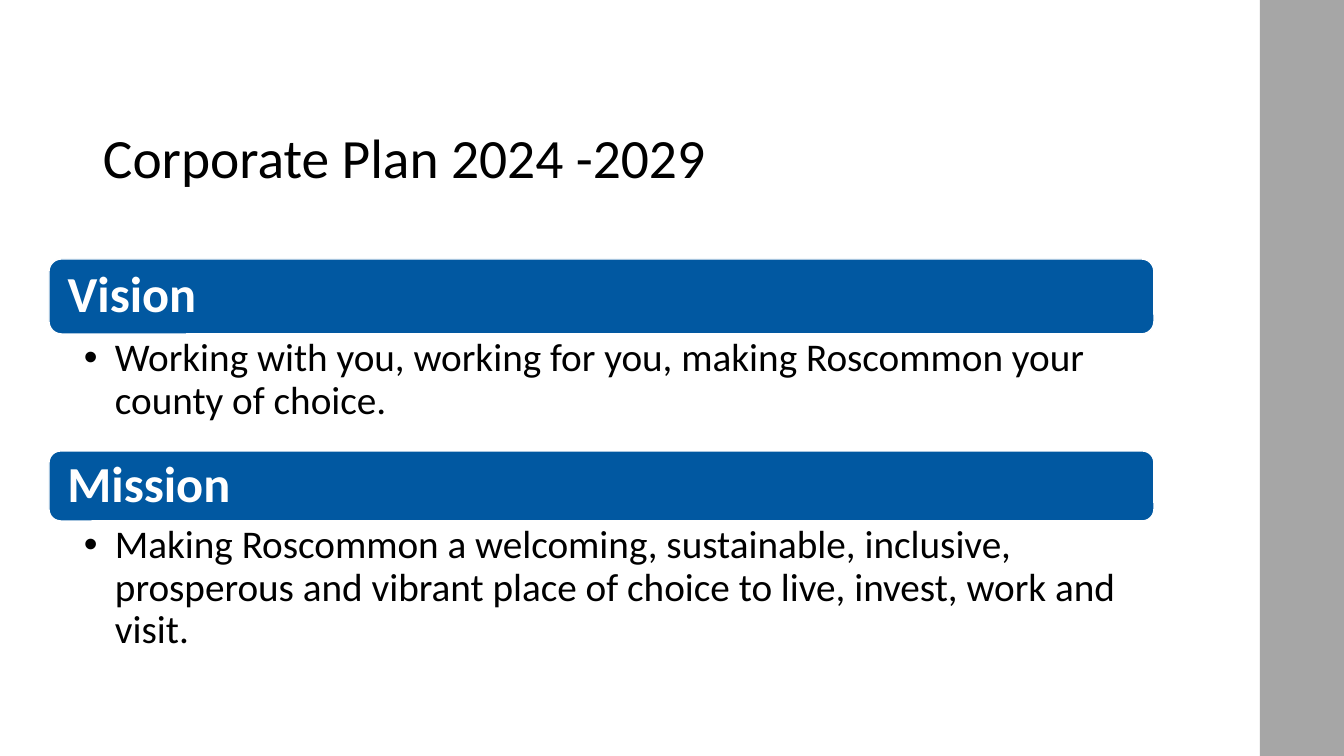
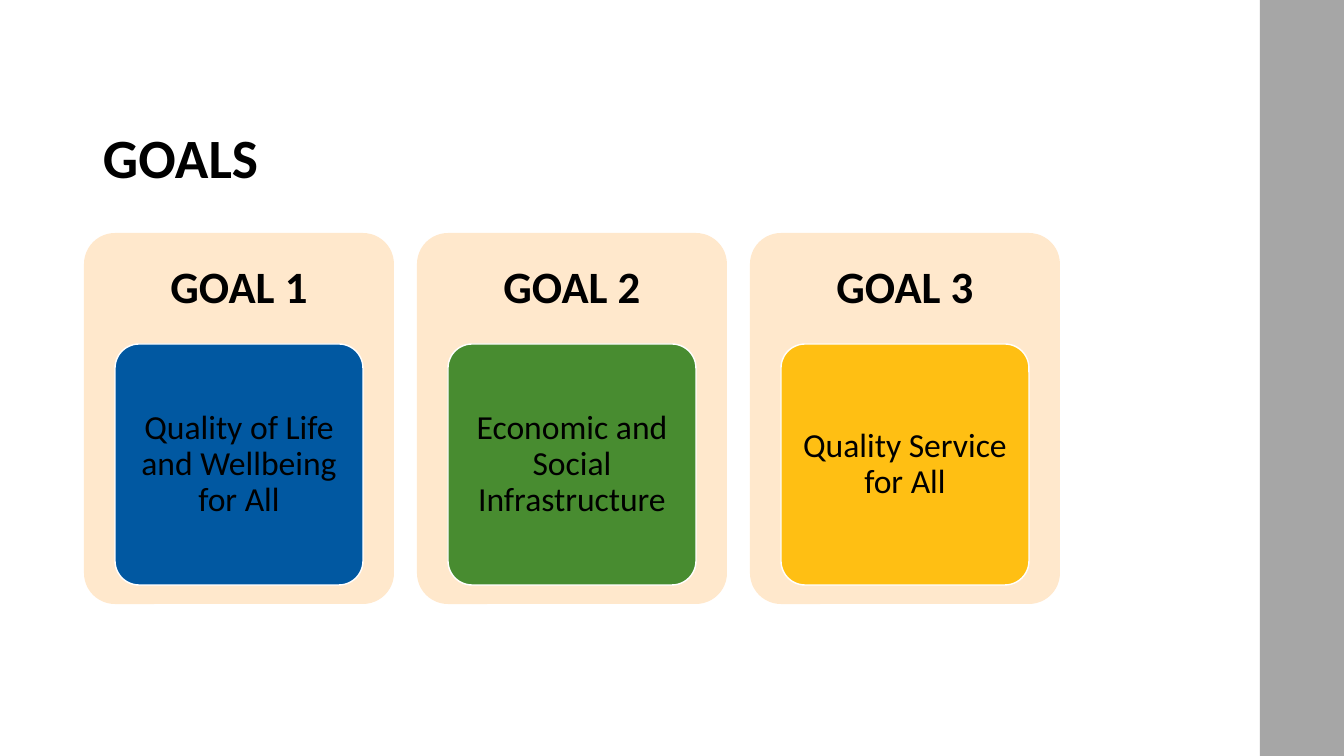
"""Build the corporate plan slides: vision and mission, then goals."""
from dataclasses import dataclass

from lxml import etree
from pptx import Presentation
from pptx import util as u
from pptx.dml.color import RGBColor
from pptx.enum import shapes, text
from pptx.oxml.ns import qn

PX = 12192000 / 1344


def px(n):
    return u.Emu(round(n * PX))


@dataclass(frozen=True)
class Theme:
    font: str = "Calibri"
    ink: str = "000000"
    paper: str = "FFFFFF"
    band: str = "A6A6A6"
    panel: str = "FFE8CC"
    blue: str = "0158A1"
    green: str = "488C30"
    yellow: str = "FFBF13"
    title: float = 39.6
    bar: int = 36
    goal: int = 32
    body: int = 28
    tile: int = 24


class Deck:
    """Hold the style and the current slide, and draw each kind of element."""

    def __init__(self, theme):
        self.theme = theme
        self.prs = Presentation()
        self.prs.slide_width, self.prs.slide_height = px(1344), px(756)
        self.s = None

    def slide(self, title, bold=False):
        t = self.theme
        self.s = self.prs.slides.add_slide(self.prs.slide_layouts[6])
        self.shape((1260, 0, 84, 756), t.band, kind=shapes.MSO_SHAPE.RECTANGLE)
        self.label((93, 135, 1159, 51), title, t.title, bold=bold, insets=(10, 5, 10, 5))

    def shape(self, box, fill, line=None, adj=None, kind=shapes.MSO_SHAPE.ROUNDED_RECTANGLE):
        sp = self.s.shapes.add_shape(kind, *map(px, box))
        sp.shadow.inherit = False
        sp.fill.solid()
        sp.fill.fore_color.rgb = RGBColor.from_string(fill)
        if line:
            sp.line.color.rgb = RGBColor.from_string(line)
            sp.line.width = u.Pt(1)
        else:
            sp.line.fill.background()
        if adj is not None:
            sp.adjustments[0] = adj
        return sp

    def label(self, box, words, size, **style):
        sp = self.s.shapes.add_textbox(*map(px, box))
        self.set_text(sp, words, size, **style)

    def set_text(self, sp, words, size, color=None, bold=False, align=text.PP_ALIGN.LEFT,
                 anchor=text.MSO_ANCHOR.MIDDLE, insets=(0, 0, 0, 0), bullet=False):
        tf = sp.text_frame
        tf.word_wrap = True
        tf.vertical_anchor = anchor
        tf.margin_left, tf.margin_top, tf.margin_right, tf.margin_bottom = map(px, insets)
        p = tf.paragraphs[0]
        p.text = words
        p.alignment = align
        p.line_spacing = 0.9
        if bullet:
            self.bullet(p)
        p.font.name = self.theme.font
        p.font.size = u.Pt(size)
        p.font.bold = bold
        p.font.color.rgb = RGBColor.from_string(color or self.theme.ink)

    def bullet(self, p):
        pr = p._p.get_or_add_pPr()
        pr.set("marL", str(px(31)))
        pr.set("indent", str(px(-31)))
        etree.SubElement(pr, qn("a:buFont"), typeface="Arial")
        etree.SubElement(pr, qn("a:buChar"), char="•")

    def section(self, top, bar_h, body_h, heading, body):
        t = self.theme
        sp = self.shape((49, top, 1105, bar_h), t.blue, line=t.paper)
        self.set_text(sp, heading, t.bar, color=t.paper, bold=True, insets=(15, 0, 15, 0))
        self.label((49, top + bar_h, 1105, body_h), body, t.body, bullet=True,
                   anchor=text.MSO_ANCHOR.TOP, insets=(35, 4, 22, 4))

    def goal_card(self, left, heading, body, fill):
        t = self.theme
        center = text.PP_ALIGN.CENTER
        self.shape((left, 233, 310, 371), t.panel, adj=0.1)
        self.label((left, 233, 310, 111), heading, t.goal, bold=True, align=center,
                   insets=(13, 13, 13, 13))
        sp = self.shape((left + 31, 344, 248, 241), fill, line=t.paper, adj=0.1)
        self.set_text(sp, body, t.tile, align=center, insets=(7, 5, 7, 5))


def main():
    theme = Theme()
    deck = Deck(theme)

    deck.slide("Corporate Plan 2024 -2029")
    deck.section(259, 75, 117, "Vision",
                 "Working with you, working for you, making Roscommon your county of choice.")
    deck.section(451, 70, 139, "Mission",
                 "Making Roscommon a welcoming, sustainable, inclusive, prosperous and "
                 "vibrant place of choice to live, invest, work and visit.")

    deck.slide("GOALS", bold=True)
    goals = [
        ("Quality of Life and Wellbeing for All", theme.blue),
        ("Economic and Social Infrastructure", theme.green),
        ("Quality Service for All", theme.yellow),
    ]
    for i, (body, fill) in enumerate(goals):
        deck.goal_card(84 + 333 * i, f"GOAL {i + 1}", body, fill)

    deck.prs.save("out.pptx")


if __name__ == "__main__":
    main()
